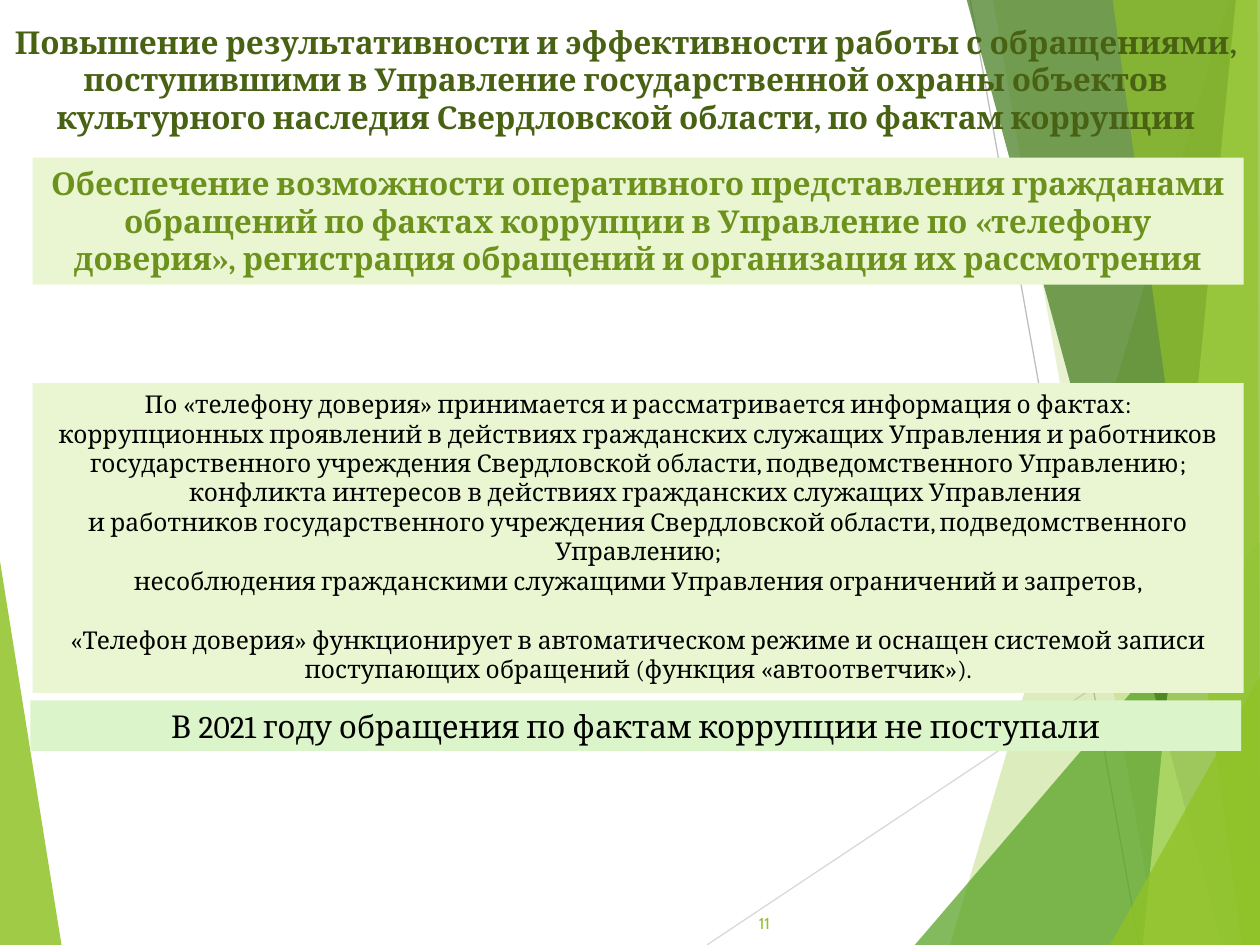
from dataclasses import dataclass

from lxml.etree import SubElement
from pptx import Presentation
from pptx.dml.color import RGBColor
from pptx.enum.shapes import MSO_CONNECTOR as CONN, MSO_SHAPE as SHAPE
from pptx.enum.text import MSO_ANCHOR as ANCHOR, PP_ALIGN as ALIGN
from pptx.oxml.ns import qn
from pptx.util import Inches, Pt


@dataclass(frozen=True)
class Theme:
    lime: str = "90C226"
    green: str = "54A021"
    forest: str = "3F7819"
    pale_lime: str = "C0E474"
    lime_panel: str = "EAF6D1"
    green_panel: str = "DBF4CA"
    heading: str = "486113"
    subheading: str = "6C921D"
    body: str = "000000"
    light_line: str = "D9D9D9"
    grey_line: str = "BFBFBF"
    serif: str = "Cambria"
    sans: str = "Cabin"
    title_size: int = 18
    body_size: int = 14
    number_size: int = 9


def write_text(tf, text, *, size, color, font, bold=False,
               align=ALIGN.CENTER, anchor=ANCHOR.TOP, gap_before_last=0):
    """Write one paragraph per line of text; a vertical tab is a line break."""
    tf.word_wrap = True
    tf.vertical_anchor = anchor
    for i, line in enumerate(text.split("\n")):
        p = tf.add_paragraph() if i else tf.paragraphs[0]
        p.text = line
        p.alignment = align
        for r in p.runs:
            r.font.size, r.font.name, r.font.bold = Pt(size), font, bold
            r.font.color.rgb = RGBColor.from_string(color)
    if gap_before_last:
        p.space_before = Pt(gap_before_last)


class SlideBuilder:
    def __init__(self, slide, theme):
        self.s = slide
        self.theme = theme

    def fill(self, sp, color, alpha=100):
        sp.shadow.inherit = False
        sp.line.fill.background()
        sp.fill.solid()
        sp.fill.fore_color.rgb = RGBColor.from_string(color)
        if alpha < 100:
            clr = sp._element.spPr.find(qn("a:solidFill"))[0]
            SubElement(clr, qn("a:alpha"), val=str(alpha * 1000))

    def facet(self, points, color, alpha):
        pts = [(Inches(x), Inches(y)) for x, y in points]
        builder = self.s.shapes.build_freeform(*pts[0])
        builder.add_line_segments(pts[1:], close=True)
        self.fill(builder.convert_to_shape(), color, alpha)

    def line(self, start, end, color):
        ends = [Inches(v) for v in (*start, *end)]
        c = self.s.shapes.add_connector(CONN.STRAIGHT, *ends)
        c.line.color.rgb = RGBColor.from_string(color)
        c.line.width = Pt(0.75)
        SubElement(c._element.spPr, qn("a:effectLst"))

    def panel(self, box, back, text, **fmt):
        sp = self.s.shapes.add_shape(SHAPE.RECTANGLE, *map(Inches, box))
        self.fill(sp, back)
        write_text(sp.text_frame, text, font=self.theme.serif, **fmt)

    def text(self, box, text, **fmt):
        sp = self.s.shapes.add_textbox(*map(Inches, box))
        write_text(sp.text_frame, text, **fmt)


def main():
    prs = Presentation()
    prs.slide_width, prs.slide_height = Inches(10), Inches(7.5)
    t = Theme()
    b = SlideBuilder(prs.slides.add_slide(prs.slide_layouts[6]), t)

    # Background facets and thin lines
    b.facet([(-0.01, 4.39), (0.49, 7.51), (-0.01, 7.5)], t.lime, 85)
    b.line((5.61, 7.5), (10.01, 4.57), t.light_line)
    b.line((7.7, 0), (9.04, 7.5), t.grey_line)
    top, bottom, right = -0.01, 7.5, 10.01
    facets = [
        ([(9.75, 0), (7.54, bottom), (right, bottom), (right, 0)], t.lime, 30),
        ([(7.88, top), (9.19, bottom), (right, bottom), (right, top)], t.lime, 20),
        ([(7.26, bottom), (right, 4.29), (right, bottom)], t.green, 72),
        ([(7.67, top), (9.7, bottom), (right, bottom), (right, top)], t.forest, 70),
        ([(9.81, top), (9.07, bottom), (right, bottom), (10, top)], t.pale_lime, 70),
        ([(8.83, top), (9.86, bottom), (10, bottom), (9.98, top)], t.lime, 65),
        ([(8.81, bottom), (right, 5.35), (right, bottom)], t.lime, 80),
    ]
    for points, color, alpha in facets:
        b.facet(points, color, alpha)

    # Panels
    b.panel((0.26, 1.25, 9.61, 1.01), t.lime_panel,
            "Обеспечение возможности оперативного представления гражданами "
            "обращений по фактах коррупции в Управление по «телефону доверия», "
            "регистрация обращений и организация их рассмотрения",
            size=t.title_size, color=t.subheading, bold=True)
    b.panel((0.26, 3.04, 9.61, 2.46), t.lime_panel,
            "По «телефону доверия» принимается и рассматривается информация о фактах:\n"
            "коррупционных проявлений в действиях гражданских служащих Управления "
            "и работников государственного учреждения Свердловской области, "
            "подведомственного Управлению;\n"
            "конфликта интересов в действиях гражданских служащих Управления \v"
            "и работников государственного учреждения Свердловской области, "
            "подведомственного Управлению;\n"
            "несоблюдения гражданскими служащими Управления ограничений и запретов,\n"
            "«Телефон доверия» функционирует в автоматическом режиме и оснащен "
            "системой записи поступающих обращений (функция «автоответчик»).",
            size=t.body_size, color=t.body, gap_before_last=16.8)
    b.panel((0.24, 5.56, 9.61, 0.4), t.green_panel,
            "В 2021 году обращения по фактам коррупции не поступали",
            size=t.title_size, color=t.body)

    # Title and slide number
    b.text((-0.03, 0.13, 10, 1.01),
           "Повышение результативности и эффективности работы с обращениями, "
           "поступившими в Управление государственной охраны объектов культурного "
           "наследия Свердловской области, по фактам коррупции",
           size=t.title_size, color=t.heading, font=t.serif, bold=True)
    b.text((4.21, 7.13, 2, 0.4), "11", size=t.number_size, color=t.lime,
           font=t.sans, align=ALIGN.RIGHT, anchor=ANCHOR.MIDDLE)

    prs.save("out.pptx")


if __name__ == "__main__":
    main()
